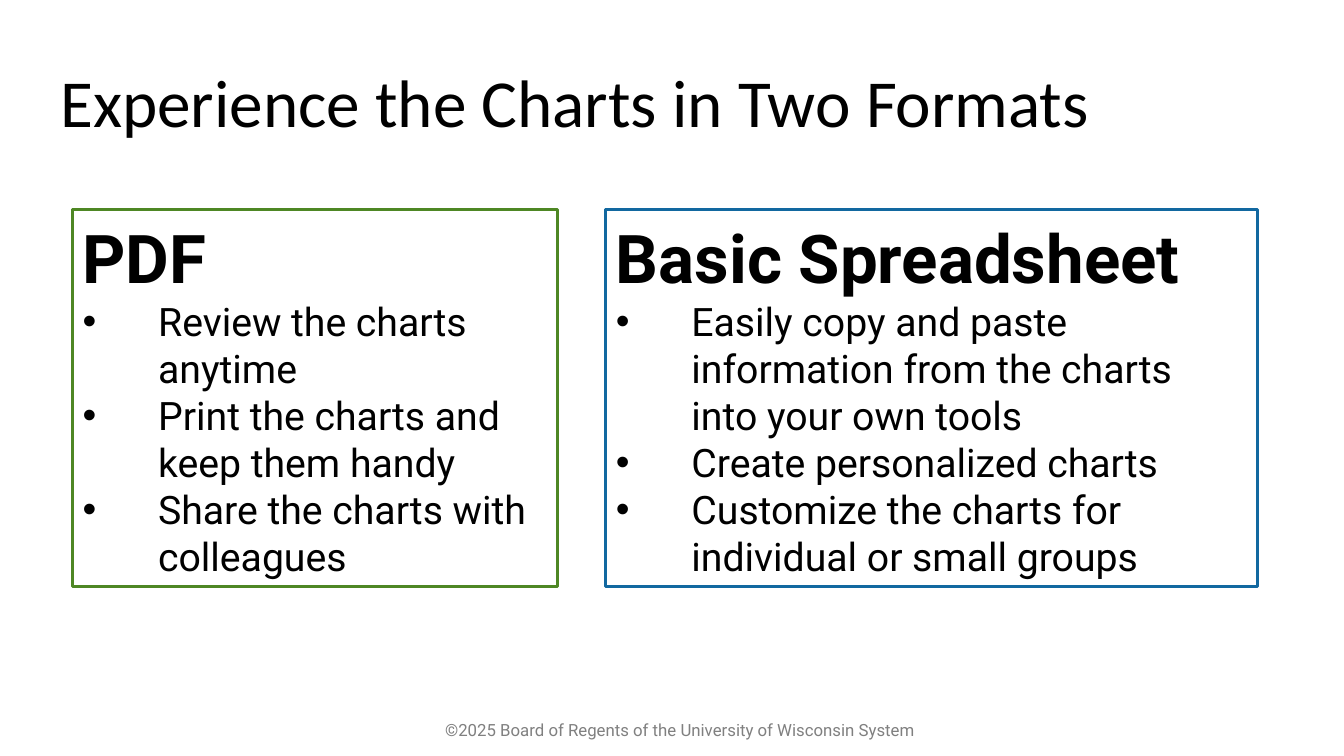
from dataclasses import dataclass

from lxml import etree
from pptx import Presentation
from pptx.dml.color import RGBColor
from pptx.enum import shapes, text
from pptx.oxml import ns
from pptx.util import Inches, Pt


@dataclass(frozen=True)
class Theme:
    ink: str = "000000"
    muted: str = "808080"
    green: str = "4E8724"
    blue: str = "1268A0"
    title_font: str = "Calibri"
    body_font: str = "Roboto"
    heading_size: int = 48
    bullet_size: int = 28
    footer_size: int = 12
    border: float = 2.25


@dataclass(frozen=True)
class FormatCard:
    left: float
    width: float
    color: str
    heading: str
    benefits: tuple[str, ...]


THEME = Theme()
CARD_TOP, CARD_HEIGHT = 2.08, 3.74
BULLET_INDENT = Inches(0.75)

CARDS = (
    FormatCard(0.72, 4.81, THEME.green, "PDF", (
        "Review the charts anytime",
        "Print the charts and keep them handy",
        "Share the charts with colleagues",
    )),
    FormatCard(6.01, 6.46, THEME.blue, "Basic Spreadsheet", (
        "Easily copy and paste information from the charts into your own tools",
        "Create personalized charts",
        "Customize the charts for individual or small groups",
    )),
)


def style(paragraph, size: float, name: str = THEME.body_font,
          color: str = THEME.ink, bold: bool = False) -> None:
    for attribute, value in {"size": Pt(size), "name": name, "bold": bold}.items():
        setattr(paragraph.font, attribute, value)
    paragraph.font.color.rgb = RGBColor.from_string(color)


def add_bullet(paragraph) -> None:
    """Give the paragraph a round bullet with a hanging indent."""
    properties = paragraph._p.get_or_add_pPr()
    properties.set("marL", str(BULLET_INDENT))
    properties.set("indent", str(-BULLET_INDENT))
    etree.SubElement(properties, ns.qn("a:buFont")).set("typeface", "Arial")
    etree.SubElement(properties, ns.qn("a:buChar")).set("char", "•")


def add_line(slide, bounds: tuple[float, ...], words: str, align, **font) -> None:
    """Add a vertically centred text box with one paragraph."""
    frame = slide.shapes.add_textbox(*map(Inches, bounds)).text_frame
    frame.word_wrap = True
    frame.vertical_anchor = text.MSO_ANCHOR.MIDDLE
    paragraph = frame.paragraphs[0]
    paragraph.text = words
    paragraph.alignment = align
    style(paragraph, **font)


def add_card(slide, card: FormatCard) -> None:
    bounds = (card.left, CARD_TOP, card.width, CARD_HEIGHT)
    box = slide.shapes.add_shape(shapes.MSO_SHAPE.RECTANGLE, *map(Inches, bounds))
    box.shadow.inherit = False
    box.fill.background()
    box.line.color.rgb = RGBColor.from_string(card.color)
    box.line.width = Pt(THEME.border)

    frame = box.text_frame
    frame.word_wrap = True
    frame.auto_size = text.MSO_AUTO_SIZE.SHAPE_TO_FIT_TEXT
    frame.vertical_anchor = text.MSO_ANCHOR.MIDDLE
    heading = frame.paragraphs[0]
    heading.text = card.heading
    heading.alignment = text.PP_ALIGN.LEFT
    style(heading, THEME.heading_size, bold=True)

    for benefit in card.benefits:
        item = frame.add_paragraph()
        item.text = benefit
        item.alignment = text.PP_ALIGN.LEFT
        add_bullet(item)
        style(item, THEME.bullet_size)


def main() -> None:
    deck = Presentation()
    deck.slide_width, deck.slide_height = Inches(13.33), Inches(7.5)
    slide = deck.slides.add_slide(deck.slide_layouts[6])

    add_line(slide, (0.5, 0.5, 12.33, 1), "Experience the Charts in Two Formats",
             text.PP_ALIGN.LEFT, size=THEME.heading_size, name=THEME.title_font)
    add_line(slide, (3.82, 7.04, 5.85, 0.4),
             "©2025 Board of Regents of the University of Wisconsin System",
             text.PP_ALIGN.CENTER, size=THEME.footer_size, color=THEME.muted)
    for card in CARDS:
        add_card(slide, card)

    deck.save("out.pptx")


if __name__ == "__main__":
    main()
